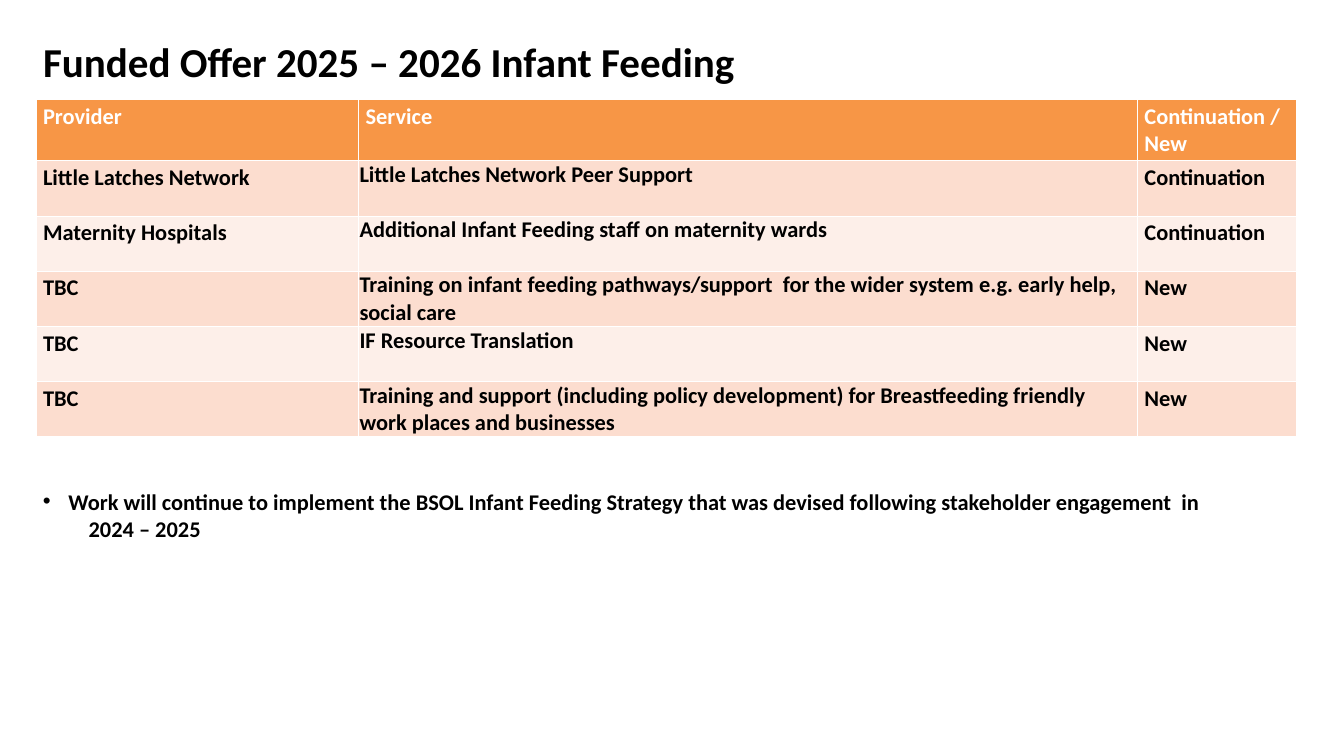
from lxml.etree import SubElement
from pptx import Presentation
from pptx.dml.color import RGBColor
from pptx.enum.text import MSO_ANCHOR, PP_ALIGN
from pptx.oxml.ns import qn
from pptx.util import Inches, Pt

BLACK = RGBColor(0x00, 0x00, 0x00)
WHITE = RGBColor(0xFF, 0xFF, 0xFF)
ORANGE = RGBColor(0xF7, 0x96, 0x46)
PEACH = RGBColor(0xFC, 0xDD, 0xCF)
PALE_PEACH = RGBColor(0xFD, 0xEF, 0xE9)

LEFT, WIDTH = 0.54, 18.75
COLUMN_WIDTHS = (4.8, 11.59, 2.36)
HEADER_HEIGHT, ROW_HEIGHT = 0.91, 0.82
SERVICE_COLUMN = 1

OFFERS = [
    ("Provider", "Service", "Continuation / New"),
    ("Little Latches Network", "Little Latches Network Peer Support", "Continuation"),
    ("Maternity Hospitals", "Additional Infant Feeding staff on maternity wards",
     "Continuation"),
    ("TBC", "Training on infant feeding pathways/support  for the wider system "
     "e.g. early help, social care", "New"),
    ("TBC", "IF Resource Translation", "New"),
    ("TBC", "Training and support (including policy development) for "
     "Breastfeeding friendly work places and businesses", "New"),
]
# Each line of the note: text, left margin, first-line indent, bullet
NOTE_LINES = [
    ("Work will continue to implement the BSOL Infant Feeding Strategy that was "
     "devised following stakeholder engagement  in", 0.38, -0.38, "•"),
    ("2024 – 2025", 0.68, 0, None),
]


class SlideBuilder:
    font_name = "Calibri"
    title_size = 44
    body_size = 24

    def __init__(self, slide):
        self.slide = slide

    def format_text(self, paragraph, size, color):
        for run in paragraph.runs:
            run.font.name = self.font_name
            run.font.size = Pt(size)
            run.font.bold = True
            run.font.color.rgb = color

    def title(self, text, left, top, width, height):
        title = self.slide.shapes.title
        title.left, title.top = Inches(left), Inches(top)
        title.width, title.height = Inches(width), Inches(height)
        text_frame = title.text_frame
        text_frame.text = text
        text_frame.vertical_anchor = MSO_ANCHOR.MIDDLE
        paragraph = text_frame.paragraphs[0]
        paragraph.alignment = PP_ALIGN.LEFT
        self.format_text(paragraph, self.title_size, BLACK)

    def table(self, rows, left, top):
        height = HEADER_HEIGHT + ROW_HEIGHT * (len(rows) - 1)
        table = self.slide.shapes.add_table(
            len(rows), len(COLUMN_WIDTHS), Inches(left), Inches(top),
            Inches(WIDTH), Inches(height)).table
        for column, width in zip(table.columns, COLUMN_WIDTHS):
            column.width = Inches(width)
        for row_index, texts in enumerate(rows):
            is_header = row_index == 0
            table.rows[row_index].height = Inches(
                HEADER_HEIGHT if is_header else ROW_HEIGHT)
            band = PEACH if row_index % 2 else PALE_PEACH
            for column_index, text in enumerate(texts):
                cell = table.cell(row_index, column_index)
                cell.text = text
                cell.fill.solid()
                cell.fill.fore_color.rgb = ORANGE if is_header else band
                if column_index == SERVICE_COLUMN and not is_header:
                    cell.margin_left = cell.margin_right = Inches(0.01)
                    cell.margin_top, cell.margin_bottom = Inches(0.01), 0
                self.format_text(cell.text_frame.paragraphs[0], self.body_size,
                                 WHITE if is_header else BLACK)

    def note(self, lines, left, top, width, height):
        text_box = self.slide.shapes.add_textbox(
            Inches(left), Inches(top), Inches(width), Inches(height))
        text_frame = text_box.text_frame
        text_frame.word_wrap = True
        text_frame.text = "\n".join(line[0] for line in lines)
        for paragraph, line in zip(text_frame.paragraphs, lines):
            _, margin, indent, bullet = line
            self.format_text(paragraph, self.body_size, BLACK)
            properties = paragraph._p.get_or_add_pPr()
            properties.set("marL", str(Inches(margin)))
            properties.set("indent", str(Inches(indent)))
            if bullet:
                SubElement(properties, qn("a:buFont"), typeface="Arial")
                SubElement(properties, qn("a:buChar"), char=bullet)


def main():
    presentation = Presentation()
    presentation.slide_width = Inches(20)
    presentation.slide_height = Inches(11.25)
    title_only = presentation.slide_layouts[5]
    builder = SlideBuilder(presentation.slides.add_slide(title_only))

    # Heading
    builder.title("Funded Offer 2025 – 2026 Infant Feeding", LEFT, 0.28, 15.17, 1.25)
    # Funded services; the default table style draws the white rules
    builder.table(OFFERS, LEFT, 1.48)
    # Strategy note
    builder.note(NOTE_LINES, LEFT, 7.21, WIDTH, 0.91)

    presentation.save("out.pptx")


if __name__ == "__main__":
    main()
